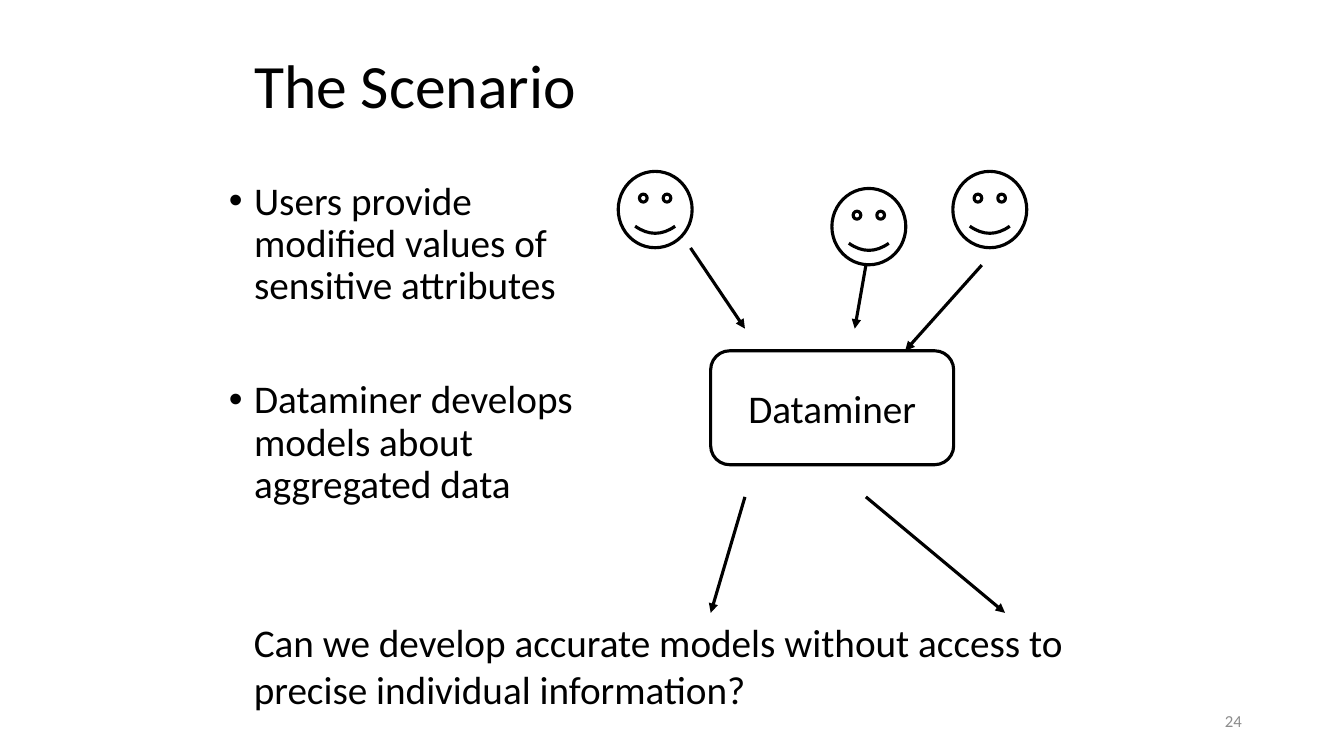
from lxml import etree
from pptx import Presentation
from pptx.dml.color import RGBColor
from pptx.enum import shapes, text
from pptx.oxml.ns import qn
from pptx.util import Inches, Pt

# Content; places are percentages of the slide's width and height
TITLE = ("The Scenario", (18.15, 4.4, 63.75, 14.5))
BULLETS = ["Users provide modified values of sensitive attributes",
           "Dataminer develops models about aggregated data"]
BODY_AREA = (16.28, 23.33, 29.4, 66)
QUESTION = ("Can we develop accurate models without access to "
            "precise individual information?", (18.15, 81.07, 63.75, 13.7))
NUMBER = ("24", (70.65, 92.67, 22.5, 5.33))
MINER = ("Dataminer", (52.88, 46.4, 18.08, 15.07))
FACE_SIZE = (5.5, 10.1)
USERS = [(70.9, 22.67), (61.9, 24.93), (46, 22.67)]
ARROWS = [((51.38, 32.8), (55.43, 43.47)),
          ((64.43, 35.07), (63.6, 43.47)),
          ((73.05, 35.07), (67.35, 46.4)),
          ((55.43, 65.73), (52.88, 81.07)),
          ((64.43, 65.73), (74.78, 81.07))]
BLACK, GREY = "000000", "8C8C8C"
FONT, TEXT_SIZE, LINE_WIDTH = "Calibri", 28, Pt(2.25)

prs = Presentation()
prs.slide_width, prs.slide_height = Inches(13.33), Inches(7.5)
slide = prs.slides.add_slide(prs.slide_layouts[1])


def place(*shares):
    sides = (prs.slide_width, prs.slide_height) * 2
    return [round(side * share / 100) for side, share in zip(sides, shares)]


def color(hex_string):
    return RGBColor.from_string(hex_string)


def move(sp, area):
    sp.left, sp.top, sp.width, sp.height = place(*area)


def write(p, words, size=TEXT_SIZE, ink=BLACK, align=text.PP_ALIGN.LEFT):
    p.alignment = align
    r = p.add_run()
    r.text = words
    r.font.name, r.font.size = FONT, Pt(size)
    r.font.color.rgb = color(ink)


def frame(sp, anchor, wrap=True):
    tf = sp.text_frame
    tf.auto_size = text.MSO_AUTO_SIZE.NONE
    tf.word_wrap, tf.vertical_anchor = wrap, anchor
    return tf


def outline(kind, area):
    sp = slide.shapes.add_shape(kind, *place(*area))
    sp.shadow.inherit = False
    sp.fill.background()
    sp.line.color.rgb, sp.line.width = color(BLACK), LINE_WIDTH
    return sp


def arrow(start, end):
    line = slide.shapes.add_connector(
        shapes.MSO_CONNECTOR.STRAIGHT, *place(*start, *end))
    line.line.color.rgb, line.line.width = color(BLACK), LINE_WIDTH
    etree.SubElement(line.line._get_or_add_ln(), qn("a:tailEnd"), type="triangle")
    etree.SubElement(line._element.spPr, qn("a:effectLst"))


# Title
title = slide.shapes.title
move(title, TITLE[1])
p = frame(title, text.MSO_ANCHOR.MIDDLE).paragraphs[0]
p.line_spacing = 0.9
write(p, TITLE[0], 44)

# Bullets, set apart by paragraph spacing
body = slide.placeholders[1]
move(body, BODY_AREA)
tf = frame(body, text.MSO_ANCHOR.TOP)
for i, words in enumerate(BULLETS):
    p = tf.add_paragraph() if i else tf.paragraphs[0]
    p.line_spacing, p.space_before = 0.9, Pt(51 if i else 10)
    pPr = p._p.get_or_add_pPr()
    pPr.set("marL", str(Inches(0.25)))
    pPr.set("indent", str(-Inches(0.25)))
    write(p, words)

# Users, data miner and the flow between them
for corner in USERS:
    outline(shapes.MSO_SHAPE.SMILEY_FACE, corner + FACE_SIZE)
miner = outline(shapes.MSO_SHAPE.FLOWCHART_ALTERNATE_PROCESS, MINER[1])
write(frame(miner, text.MSO_ANCHOR.MIDDLE, False).paragraphs[0],
      MINER[0], align=text.PP_ALIGN.CENTER)
for start, end in ARROWS:
    arrow(start, end)

# Closing question and slide number
question = slide.shapes.add_textbox(*place(*QUESTION[1]))
write(frame(question, text.MSO_ANCHOR.TOP).paragraphs[0], QUESTION[0])
number = slide.shapes.add_textbox(*place(*NUMBER[1]))
write(frame(number, text.MSO_ANCHOR.MIDDLE).paragraphs[0],
      NUMBER[0], 12, GREY, text.PP_ALIGN.RIGHT)

prs.save("out.pptx")
